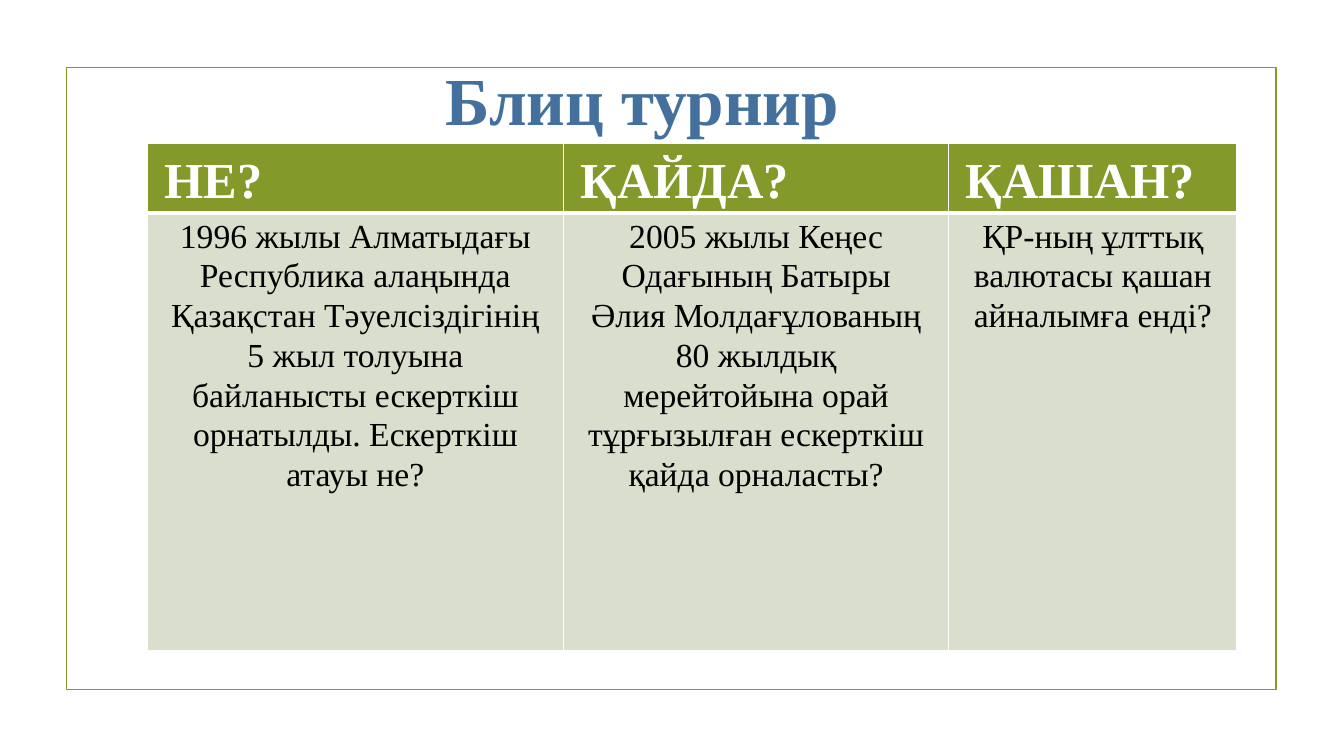
from lxml import etree
from pptx import Presentation
from pptx.dml.color import RGBColor
from pptx.enum.shapes import MSO_SHAPE
from pptx.enum.text import MSO_ANCHOR, PP_ALIGN
from pptx.oxml.ns import qn
from pptx.util import Inches, Pt

RECTANGLE = MSO_SHAPE.RECTANGLE
TOP, BOTTOM = MSO_ANCHOR.TOP, MSO_ANCHOR.BOTTOM
LEFT, CENTER = PP_ALIGN.LEFT, PP_ALIGN.CENTER

FONT = "Times New Roman"
COLORS = {
    "olive": "83992A",
    "sage": "D9DECD",
    "title": "44709D",
    "white": "FFFFFF",
    "black": "000000",
}
TITLE_ONLY_LAYOUT = 5
SLIDE_WIDTH, SLIDE_HEIGHT = 13.33, 7.5

FRAME_BOX = (0.66, 0.67, 12, 6.17)
TITLE_BOX = (0.22, 0.52, 12.47, 0.91)
TABLE_BOX = (1.46, 1.42, 10.81, 5.03)
COLUMN_WIDTHS = (4.13, 3.82, 2.86)
HEADER_HEIGHT = 0.69

QUESTIONS = {
    "НЕ?": "1996 жылы Алматыдағы Республика алаңында Қазақстан Тәуелсіздігінің "
           "5 жыл толуына байланысты ескерткіш орнатылды. Ескерткіш атауы не?",
    "ҚАЙДА?": "2005 жылы Кеңес Одағының Батыры Әлия Молдағұлованың 80 жылдық "
              "мерейтойына орай тұрғызылған ескерткіш қайда орналасты?",
    "ҚАШАН?": "ҚР-ның ұлттық валютасы қашан айналымға енді?",
}


def color(name):
    return RGBColor.from_string(COLORS[name])


def inches(box):
    return [Inches(length) for length in box]


def write(frame, text, size, fill, bold=False, align=LEFT, spacing=1.0):
    paragraph = frame.paragraphs[0]
    paragraph.alignment = align
    paragraph.line_spacing = spacing
    run = paragraph.add_run()
    run.text = text
    run.font.name = FONT
    run.font.size = Pt(size)
    run.font.bold = bold
    run.font.color.rgb = color(fill)


def add_borders(cell, **widths):
    properties = cell._tc.get_or_add_tcPr()
    for side in "LRTB":
        line = etree.SubElement(properties, qn(f"a:ln{side}"), w=str(Pt(widths.get(side, 1))))
        fill = etree.SubElement(line, qn("a:solidFill"))
        etree.SubElement(fill, qn("a:srgbClr"), val=COLORS["white"])


def add_frame(slide, box):
    frame = slide.shapes.add_shape(RECTANGLE, *inches(box))
    frame.shadow.inherit = False
    frame.fill.background()
    frame.line.color.rgb = color("olive")
    frame.line.width = Pt(1.25)


def add_title(slide, box):
    title = slide.shapes.title
    title.left, title.top, title.width, title.height = inches(box)
    title.text_frame.vertical_anchor = BOTTOM
    write(title.text_frame, "Блиц турнир ", size=48, fill="title", bold=True, align=CENTER)


def style_cell(cell, fill, anchor):
    cell.margin_left = cell.margin_right = Inches(0.17)
    cell.margin_top = cell.margin_bottom = Inches(0.03)
    cell.vertical_anchor = anchor
    cell.fill.solid()
    cell.fill.fore_color.rgb = color(fill)


def add_questions(slide, box):
    table = slide.shapes.add_table(2, len(QUESTIONS), *inches(box)).table
    table.rows[0].height = Inches(HEADER_HEIGHT)
    table.rows[1].height = Inches(box[3] - HEADER_HEIGHT)
    for index, (heading, question) in enumerate(QUESTIONS.items()):
        table.columns[index].width = Inches(COLUMN_WIDTHS[index])
        header, body = table.cell(0, index), table.cell(1, index)
        add_borders(header, B=3)
        add_borders(body, T=3)
        style_cell(header, "olive", BOTTOM)
        style_cell(body, "sage", TOP)
        write(header.text_frame, heading, size=36, fill="white", bold=True, spacing=1.07)
        write(body.text_frame, question, size=24, fill="black", align=CENTER, spacing=1.07)


def main():
    presentation = Presentation()
    presentation.slide_width = Inches(SLIDE_WIDTH)
    presentation.slide_height = Inches(SLIDE_HEIGHT)
    slide = presentation.slides.add_slide(presentation.slide_layouts[TITLE_ONLY_LAYOUT])
    add_frame(slide, FRAME_BOX)
    add_title(slide, TITLE_BOX)
    add_questions(slide, TABLE_BOX)
    presentation.save("out.pptx")


if __name__ == "__main__":
    main()
